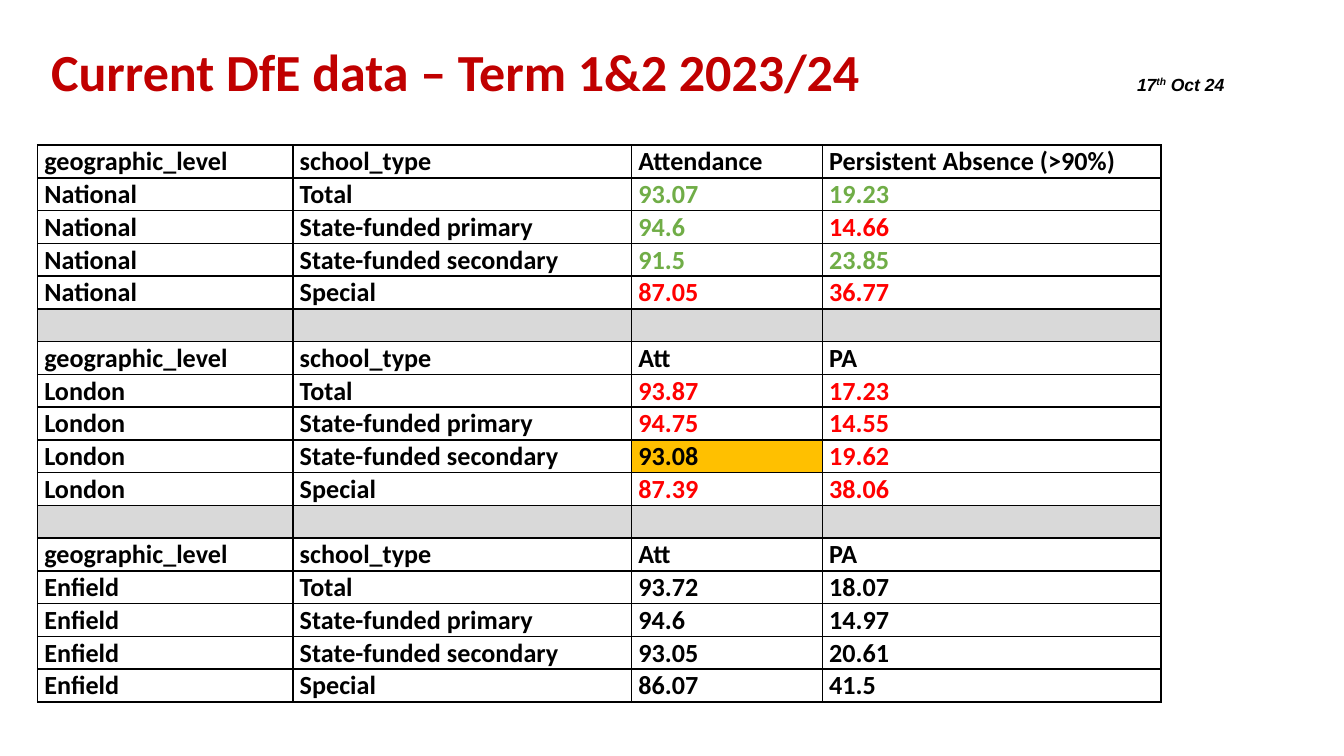
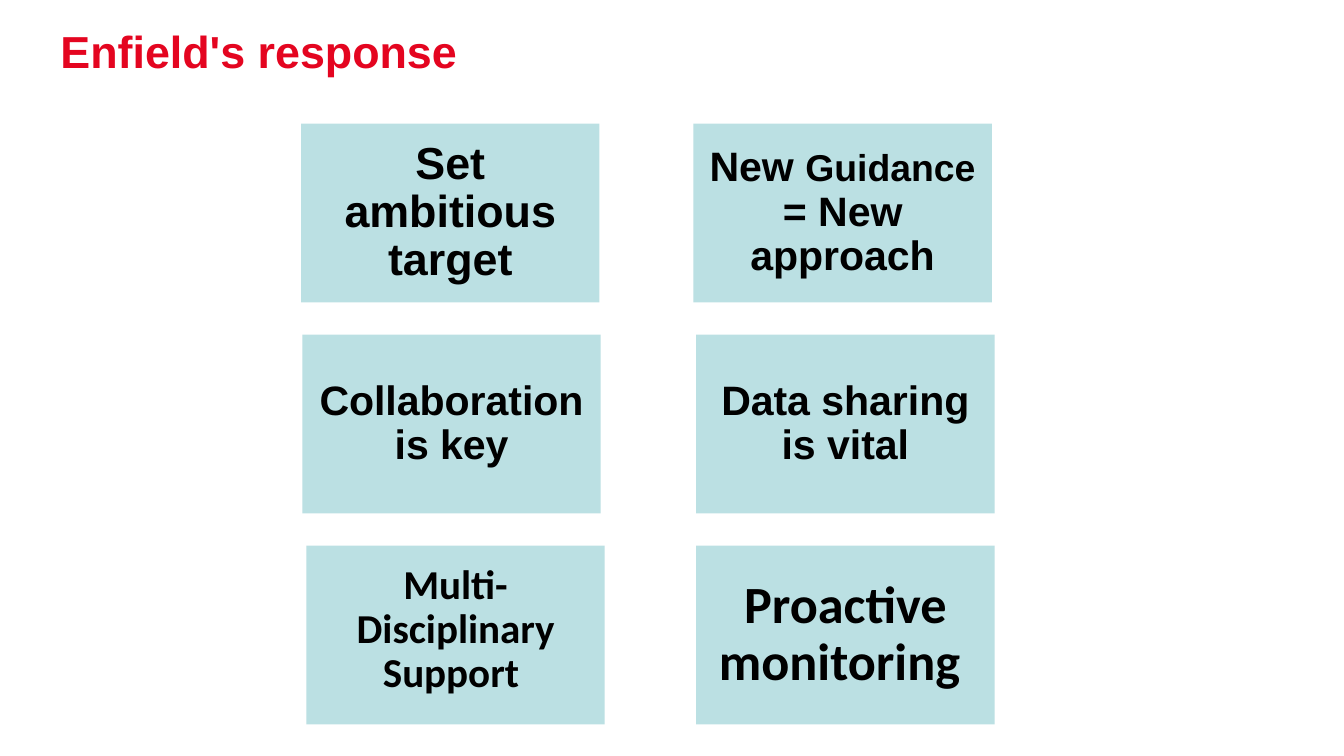
from lxml import etree
from pptx import Presentation
from pptx.dml.color import RGBColor
from pptx.enum import shapes, text
from pptx.oxml import ns
from pptx.util import Inches, Pt

BLACK = RGBColor(0x00, 0x00, 0x00)
DARK_RED = RGBColor(0xC0, 0x00, 0x00)
BRAND_RED = RGBColor(0xE4, 0x05, 0x20)
RED = RGBColor(0xFF, 0x00, 0x00)
GREEN = RGBColor(0x70, 0xAD, 0x47)
AMBER = RGBColor(0xFF, 0xC0, 0x00)
GREY = RGBColor(0xD9, 0xD9, 0xD9)
PALE_TEAL = RGBColor(0xBB, 0xE0, 0xE3)

SCHOOL_TYPES = ("Total", "State-funded primary", "State-funded secondary", "Special")
LEVELS = (
    ("National", ("Attendance", "Persistent Absence (>90%)"),
     (("93.07", GREEN, "19.23", GREEN), ("94.6", GREEN, "14.66", RED),
      ("91.5", GREEN, "23.85", GREEN), ("87.05", RED, "36.77", RED))),
    ("London", ("Att", "PA"),
     (("93.87", RED, "17.23", RED), ("94.75", RED, "14.55", RED),
      ("93.08", BLACK, "19.62", RED), ("87.39", RED, "38.06", RED))),
    ("Enfield", ("Att", "PA"),
     (("93.72", BLACK, "18.07", BLACK), ("94.6", BLACK, "14.97", BLACK),
      ("93.05", BLACK, "20.61", BLACK), ("86.07", BLACK, "41.5", BLACK))),
)
HIGHLIGHT = ("London", "93.08")
COLUMN_WIDTHS = (1.9, 2.52, 1.42, 2.52)
ROW_HEIGHT = 0.22

RESPONSES = (
    (2.24, 0, "Arial", (("Set ambitious target", 24),)),
    (5.16, 0, "Arial", (("New ", 22), ("Guidance", 20), (" = New approach", 22))),
    (2.25, 1, "Arial", (("Collaboration is key", 22),)),
    (5.18, 1, "Arial", (("Data sharing is vital", 22),)),
    (2.28, 2, "Calibri", (("Multi-Disciplinary Support ", 22),)),
    (5.18, 2, "Calibri", (("Proactive monitoring ", 28),)),
)


def style_font(font, name, size, color):
    """Apply the deck's bold lettering in a given face, size and colour."""
    font.name, font.size, font.bold = name, Pt(size), True
    font.color.rgb = color


def place_title(slide, left, top, width, height):
    """Position the title placeholder and return its empty paragraph."""
    title = slide.shapes.title
    title.left, title.top = Inches(left), Inches(top)
    title.width, title.height = Inches(width), Inches(height)
    frame = title.text_frame
    frame.auto_size = text.MSO_AUTO_SIZE.NONE
    frame.vertical_anchor = text.MSO_ANCHOR.TOP
    frame.margin_top = Inches(0.05)
    heading = frame.paragraphs[0]
    heading.alignment = text.PP_ALIGN.LEFT
    return heading


def add_dated_title(slide):
    """Write the data heading with its date on a tab stop."""
    heading = place_title(slide, 0.28, 0.24, 9, 0.46)
    tabs = etree.SubElement(heading._p.get_or_add_pPr(), ns.qn("a:tabLst"))
    etree.SubElement(tabs, ns.qn("a:tab"), pos=str(Inches(8.08)), algn="l")
    subject = heading.add_run()
    subject.text = "Current DfE data – Term 1&2 2023/24"
    style_font(subject.font, "Calibri", 27.9, DARK_RED)
    for words, raised in (("\t17", False), ("th", True), (" Oct 24", False)):
        date = heading.add_run()
        date.text = words
        style_font(date.font, "Arial", 9.4, BLACK)
        date.font.italic = True
        if raised:
            date.font._element.set("baseline", "30000")


def attendance_rows():
    """List the table rows as (text, colour) cells, with None for a divider."""
    rows = []
    for level, measures, figures in LEVELS:
        if rows:
            rows.append(None)
        rows.append([(name, BLACK) for name in ("geographic_level", "school_type", *measures)])
        for school, (attendance, att_color, absence, abs_color) in zip(SCHOOL_TYPES, figures):
            rows.append([(level, BLACK), (school, BLACK),
                         (attendance, att_color), (absence, abs_color)])
    return rows


def add_borders(cell):
    """Draw a thin black line on every side of a cell."""
    props = cell._tc.get_or_add_tcPr()
    for position, side in enumerate(("lnL", "lnR", "lnT", "lnB")):
        line = etree.Element(ns.qn(f"a:{side}"), w=str(Pt(1)))
        fill = etree.SubElement(line, ns.qn("a:solidFill"))
        etree.SubElement(fill, ns.qn("a:srgbClr"), val=str(BLACK))
        props.insert(position, line)


def fill_cell(cell, words, color, background):
    """Write and format one table cell."""
    cell.margin_left = Inches(0.05)
    cell.margin_right = Inches(0.01)
    cell.margin_top = Pt(0.5)
    cell.margin_bottom = 0
    cell.vertical_anchor = text.MSO_ANCHOR.BOTTOM
    entry = cell.text_frame.paragraphs[0]
    if words:
        entry.text = words
        style_font(entry.font, "Calibri", 14, color)
    else:
        etree.SubElement(entry._p, ns.qn("a:endParaRPr"), sz="1400")
    if background is None:
        cell.fill.background()
    else:
        cell.fill.solid()
        cell.fill.fore_color.rgb = background
    add_borders(cell)


def add_attendance_table(slide, left, top):
    """Build the attendance table with grey rows between the levels."""
    rows = attendance_rows()
    frame = slide.shapes.add_table(
        len(rows), len(COLUMN_WIDTHS), Inches(left), Inches(top),
        Inches(sum(COLUMN_WIDTHS)), Inches(ROW_HEIGHT * len(rows)))
    table = frame.table
    table.first_row = table.horz_banding = False
    for column, width in zip(table.columns, COLUMN_WIDTHS):
        column.width = Inches(width)
    for row, entries in zip(table.rows, rows):
        row.height = Inches(ROW_HEIGHT)
        for cell, (words, color) in zip(row.cells, entries or [("", BLACK)] * len(COLUMN_WIDTHS)):
            background = None if entries else GREY
            if entries and (entries[0][0], words) == HIGHLIGHT:
                background = AMBER
            fill_cell(cell, words, color, background)
    frame.height = Inches(4.07)


def add_response(slide, left, top, face, phrases):
    """Add one response card."""
    card = slide.shapes.add_shape(
        shapes.MSO_SHAPE.RECTANGLE, Inches(left), Inches(top), Inches(2.22), Inches(1.33))
    card.shadow.inherit = False
    card.fill.solid()
    card.fill.fore_color.rgb = PALE_TEAL
    card.line.fill.background()
    frame = card.text_frame
    frame.word_wrap = True
    frame.vertical_anchor = text.MSO_ANCHOR.MIDDLE
    frame.margin_left = frame.margin_right = Inches(0.09)
    frame.margin_top = Inches(0.09)
    frame.margin_bottom = Inches(0.16 if phrases[0][0].startswith("Multi") else 0.09)
    message = frame.paragraphs[0]
    message.alignment = text.PP_ALIGN.CENTER
    message.line_spacing = 0.9
    style_font(message.font, face, phrases[0][1], BLACK)
    for words, size in phrases:
        phrase = message.add_run()
        phrase.text = words
        if len(phrases) > 1:
            phrase.font.size = Pt(size)


def build_data_slide(slide):
    """Show the national, London and Enfield attendance figures."""
    add_dated_title(slide)
    add_attendance_table(slide, 0.28, 1.08)


def build_response_slide(slide):
    """Show the six response cards under their title."""
    heading = place_title(slide, 0.35, 0.13, 9, 0.56)
    heading.text = "Enfield's response"
    style_font(heading.font, "Arial", 24, BRAND_RED)
    for left, row, face, phrases in RESPONSES:
        add_response(slide, left, 0.92 + 1.57 * row, face, phrases)


def main():
    """Build both slides and save the deck."""
    deck = Presentation()
    deck.slide_width = Inches(10)
    deck.slide_height = deck.slide_width * 9 // 16
    title_only = deck.slide_layouts[5]
    for build in (build_data_slide, build_response_slide):
        build(deck.slides.add_slide(title_only))
    deck.save("out.pptx")


if __name__ == "__main__":
    main()
